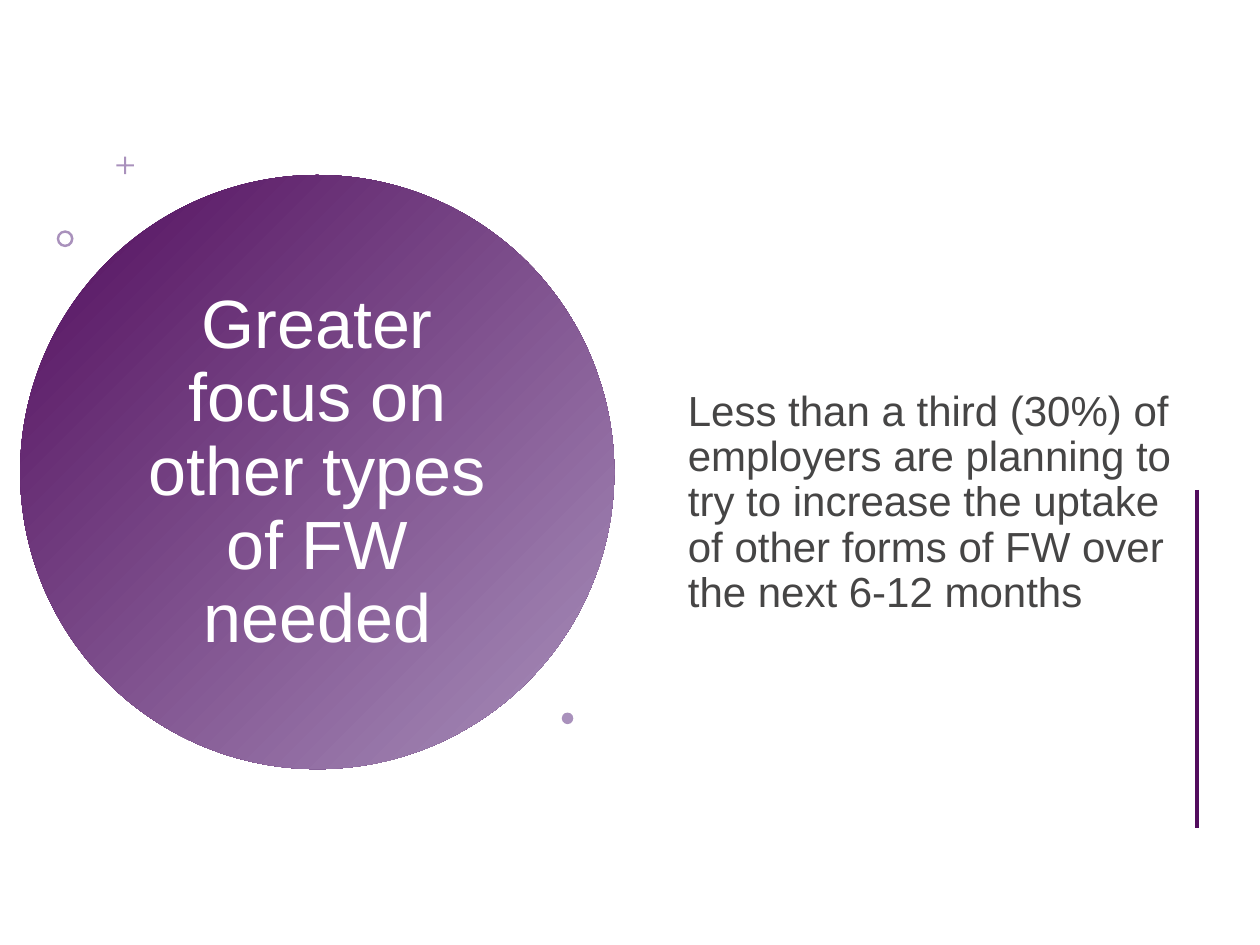
from lxml.etree import SubElement
from pptx import Presentation
from pptx.dml.color import RGBColor
from pptx.enum.shapes import MSO_CONNECTOR, MSO_SHAPE
from pptx.enum.text import MSO_ANCHOR, PP_ALIGN
from pptx.oxml.ns import qn
from pptx.util import Pt

PURPLE = RGBColor(0x52, 0x0D, 0x5D)
LILAC = RGBColor(0xA9, 0x91, 0xBC)
WHITE = RGBColor(0xFF, 0xFF, 0xFF)
INK = RGBColor(0x18, 0x17, 0x17)

deck = Presentation()
deck.slide_width, deck.slide_height = Pt(720), Pt(540)
page = deck.slides.add_slide(deck.slide_layouts[6])


def add_mark(preset, left, top, size):
    mark = page.shapes.add_shape(preset, Pt(left), Pt(top), Pt(size), Pt(size))
    mark.shadow.inherit = False
    mark.fill.solid()
    mark.fill.fore_color.rgb = LILAC
    mark.line.fill.background()
    return mark


def add_text(left, top, width, height, words, size, color):
    box = page.shapes.add_textbox(Pt(left), Pt(top), Pt(width), Pt(height))
    box.text_frame.word_wrap = True
    box.text_frame.vertical_anchor = MSO_ANCHOR.MIDDLE
    para = box.text_frame.paragraphs[0]
    para.text = words
    para.line_spacing = 0.9
    para.font.name = "Arial"
    para.font.size = Pt(size)
    para.font.color.rgb = color
    return para


circle = add_mark(MSO_SHAPE.OVAL, 11.5, 100, 339.5)
circle.fill.gradient()
circle.fill.gradient_angle = 315
for stop, color in zip(circle.fill.gradient_stops, (PURPLE, LILAC)):
    stop.color.rgb = color

title = add_text(67.5, 144.5, 227.5, 252,
                 "Greater focus on other types of FW needed", 39, WHITE)
title.alignment = PP_ALIGN.CENTER

plus = add_mark(MSO_SHAPE.CROSS, 66.5, 89.5, 10)
plus.adjustments[0] = 0.44
ring = add_mark(MSO_SHAPE.DONUT, 32.4, 131.6, 9.6)
ring.adjustments[0] = 0.15

body = add_text(386, 100, 297.5, 375,
                "Less than a third (30%) of employers are planning to try to "
                "increase the uptake of other forms of FW over the next 6-12 months",
                24, INK)
body.space_before = Pt(7.5)
for tint in body.font._element.iter(qn("a:srgbClr")):
    SubElement(tint, qn("a:alpha"), val="80000")

add_mark(MSO_SHAPE.OVAL, 321, 407.2, 6.6)

rule = page.shapes.add_connector(MSO_CONNECTOR.STRAIGHT, Pt(684), Pt(280), Pt(684), Pt(473))
rule.line.color.rgb = PURPLE
rule.line.width = Pt(2)
SubElement(rule._element.spPr, qn("a:effectLst"))

deck.save("out.pptx")
